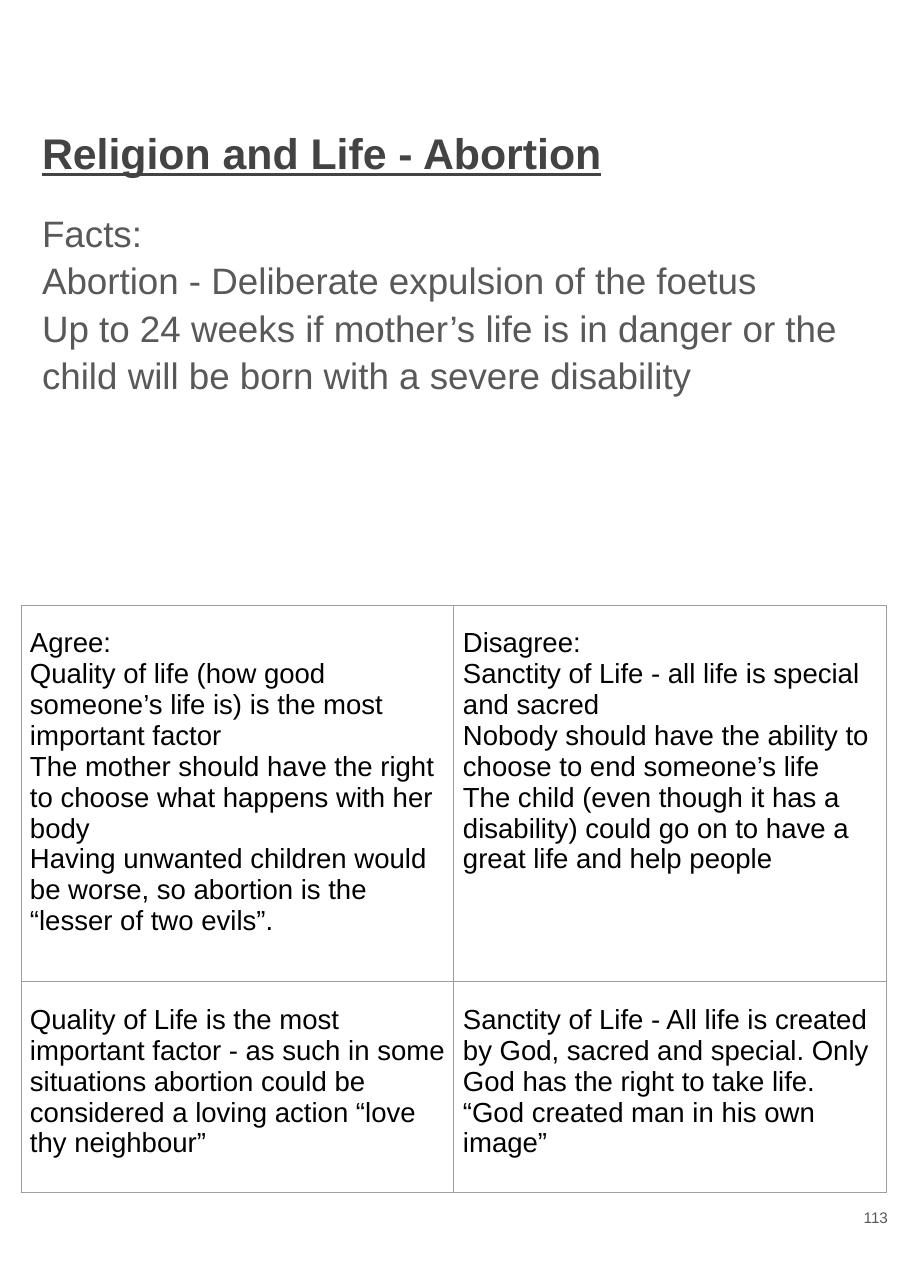
"""Build a revision page on religion and abortion."""
from dataclasses import dataclass

from lxml.etree import SubElement as Sub
from pptx import Presentation
from pptx.dml.color import RGBColor as Rgb
from pptx.enum.text import MSO_ANCHOR as Anchor, PP_ALIGN as Align
from pptx.oxml.ns import qn
from pptx.util import Pt

TITLE = ["Religion and Life - Abortion"]
FACTS = [
    "Facts:",
    "Abortion - Deliberate expulsion of the foetus",
    "Up to 24 weeks if mother’s life is in danger or the child will be "
    "born with a severe disability",
]
VIEWS = [
    [
        [
            "Agree:",
            "Quality of life (how good someone’s life is) is the most "
            "important factor",
            "The mother should have the right to choose what happens with "
            "her body",
            "Having unwanted children would be worse, so abortion is the "
            "“lesser of two evils”.",
        ],
        [
            "Disagree:",
            "Sanctity of Life - all life is special and sacred",
            "Nobody should have the ability to choose to end someone’s life",
            "The child (even though it has a disability) could go on to "
            "have a great life and help people",
        ],
    ],
    [
        [
            "Quality of Life is the most important factor - as such in some "
            "situations abortion could be considered a loving action “love "
            "thy neighbour”",
        ],
        [
            "Sanctity of Life - All life is created by God, sacred and "
            "special. Only God has the right to take life.",
            "“God created man in his own image”",
        ],
    ],
]
PAGE = ["113"]

PX = 8298
SIZE = (911, 1288)
LEFT, TOP = 21, 605
COL = 433
ROWS = [354, 200]


@dataclass(frozen=True)
class Theme:
    """Hold the font, colours and type sizes."""
    font: str = "Arial"
    head: str = "434343"
    soft: str = "595959"
    ink: str = "000000"
    rule: str = "9E9E9E"
    big: int = 28
    body: int = 24
    cell: int = 18
    small: int = 10


LOOK = Theme()


def write(frame, lines, size, color, bold=False, align=Align.LEFT, gap=1.0):
    """Fill a text frame with one paragraph per line."""
    frame.word_wrap = True
    for i, line in enumerate(lines):
        par = frame.add_paragraph() if i else frame.paragraphs[0]
        par.alignment = align
        par.line_spacing = gap
        run = par.add_run()
        run.text = line
        font = run.font
        font.name, font.size = LOOK.font, Pt(size)
        font.bold = font.underline = bold
        font.color.rgb = Rgb.from_string(color)


def box(slide, area, lines, size, color, anchor=Anchor.TOP, **style):
    """Add a text box with even insets."""
    frame = slide.shapes.add_textbox(*(n * PX for n in area)).text_frame
    frame.margin_left = frame.margin_right = 11 * PX
    frame.margin_top = frame.margin_bottom = 11 * PX
    frame.vertical_anchor = anchor
    write(frame, lines, size, color, **style)


def edge(cell):
    """Draw a thin rule on each side of a cell."""
    props = cell._tc.get_or_add_tcPr()
    for side in ("lnL", "lnR", "lnT", "lnB"):
        line = Sub(props, qn(f"a:{side}"), w=str(Pt(0.75)))
        fill = Sub(line, qn("a:solidFill"))
        Sub(fill, qn("a:srgbClr"), val=LOOK.rule)


def grid(slide):
    """Add the table of views."""
    cols = len(VIEWS[0])
    table = slide.shapes.add_table(
        len(ROWS), cols, LEFT * PX, TOP * PX,
        cols * COL * PX, sum(ROWS) * PX).table
    table.first_row = table.horz_banding = False
    for col in table.columns:
        col.width = COL * PX
    for r, (high, row) in enumerate(zip(ROWS, VIEWS)):
        table.rows[r].height = high * PX
        for c, lines in enumerate(row):
            cell = table.cell(r, c)
            cell.margin_left = cell.margin_right = 9 * PX
            cell.margin_top = cell.margin_bottom = 23 * PX
            edge(cell)
            cell.fill.background()
            write(cell.text_frame, lines, LOOK.cell, LOOK.ink)


def main():
    """Lay out the page and save it."""
    deck = Presentation()
    deck.slide_width, deck.slide_height = (n * PX for n in SIZE)
    slide = deck.slides.add_slide(deck.slide_layouts[6])
    box(slide, (31, 111, 849, 143), TITLE, LOOK.big, LOOK.head,
        bold=True, gap=1.1)
    box(slide, (31, 197, 849, 425), FACTS, LOOK.body, LOOK.soft, gap=1.07)
    grid(slide)
    box(slide, (844, 1168, 55, 98), PAGE, LOOK.small, LOOK.soft,
        anchor=Anchor.MIDDLE, align=Align.RIGHT)
    deck.save("out.pptx")


if __name__ == "__main__":
    main()
